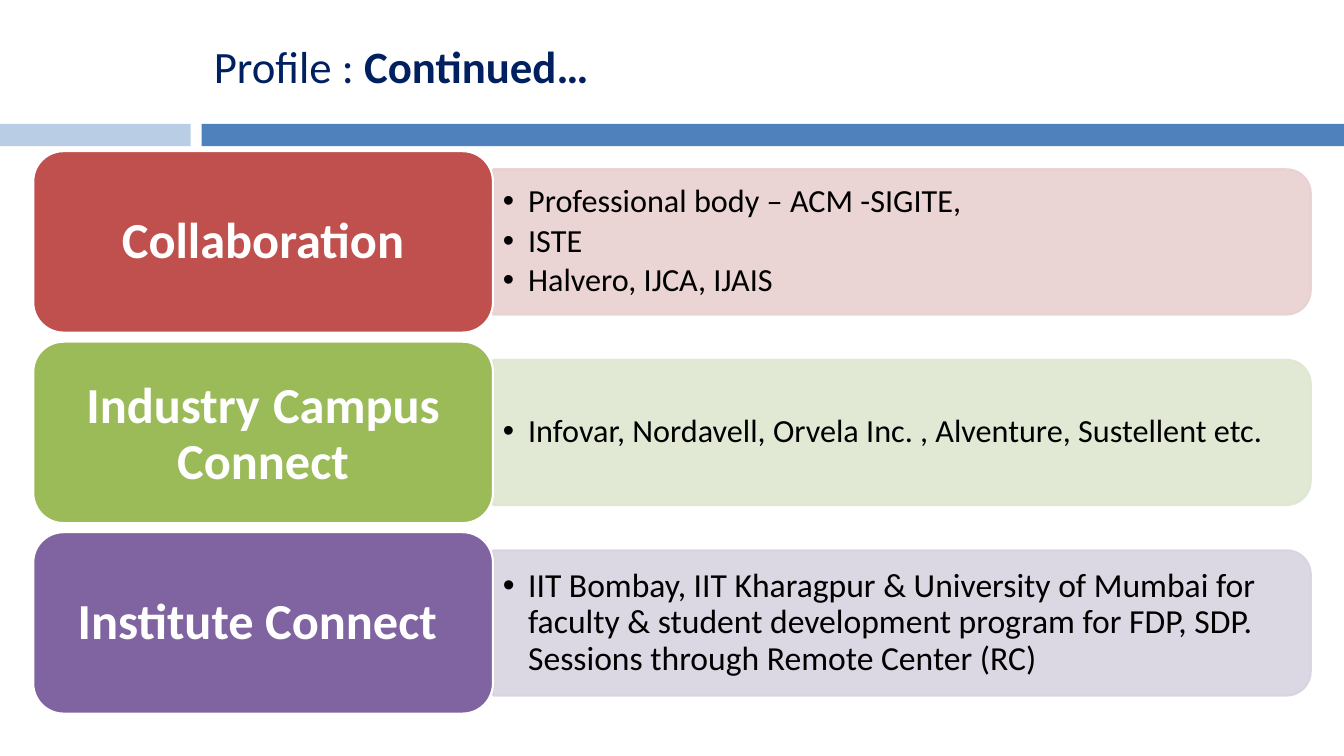
from dataclasses import dataclass

from lxml.etree import SubElement
from pptx import Presentation
from pptx.dml.color import RGBColor
from pptx.enum.shapes import MSO_SHAPE as Shape
from pptx.enum.text import MSO_ANCHOR as Anchor, PP_ALIGN as Align
from pptx.oxml.ns import qn
from pptx.util import Inches, Pt


@dataclass(frozen=True)
class Theme:
    font: str = "Calibri"
    title: str = "002060"
    band_light: str = "B9CDE5"
    band_dark: str = "4F81BD"
    white: str = "FFFFFF"
    black: str = "000000"
    title_size: int = 32
    heading_size: int = 36
    wide_space_size: int = 41
    body_size: int = 23
    long_body_size: int = 24
    outline: float = 1.5


THEME = Theme()
FIRST_ROW_TOP, ROW_STEP = 1.5, 1.89
HEADING_LEFT, HEADING_WIDTH, HEADING_HEIGHT = 0.33, 4.56, 1.8
PANEL_WIDTH, PANEL_HEIGHT = 8.11, 1.44
BODY_WIDTH, BODY_HEIGHT = 8.04, 1.3

# heading runs, heading colour, panel colour, body size, body lines
ROWS = [
    ([("Collaboration", THEME.heading_size)], "C0504D", "E8D0D0", THEME.body_size,
     ["Professional body – ACM -SIGITE,", "ISTE", "Halvero, IJCA, IJAIS"]),
    ([("Industry", THEME.heading_size), (" ", THEME.wide_space_size),
      ("Campus Connect", THEME.heading_size)], "9BBB59", "DEE7D1", THEME.body_size,
     ["Infovar, Nordavell, Orvela Inc. , Alventure, Sustellent etc."]),
    ([("Institute Connect ", THEME.heading_size)], "8064A2", "D8D3E0", THEME.long_body_size,
     ["IIT Bombay, IIT Kharagpur & University of Mumbai for faculty & student "
      "development program for FDP, SDP. Sessions through Remote Center (RC)"]),
]


class SlideBuilder:
    def __init__(self, slide, theme):
        self.slide = slide
        self.theme = theme

    def add_block(self, preset, left, top, width, height, color, outline=None):
        shape = self.slide.shapes.add_shape(
            preset, Inches(left), Inches(top), Inches(width), Inches(height))
        shape.shadow.inherit = False
        shape.fill.solid()
        shape.fill.fore_color.rgb = RGBColor.from_string(color)
        if outline:
            shape.line.color.rgb = RGBColor.from_string(outline)
            shape.line.width = Pt(self.theme.outline)
        else:
            shape.line.fill.background()
        return shape

    def prepare_frame(self, shape, side_inset, end_inset):
        frame = shape.text_frame
        frame.word_wrap = True
        frame.vertical_anchor = Anchor.MIDDLE
        frame.margin_left = frame.margin_right = Inches(side_inset)
        frame.margin_top = frame.margin_bottom = Inches(end_inset)
        return frame

    def add_text_box(self, left, top, width, height, side_inset, end_inset):
        box = self.slide.shapes.add_textbox(
            Inches(left), Inches(top), Inches(width), Inches(height))
        return self.prepare_frame(box, side_inset, end_inset)

    def add_run(self, paragraph, text, size, color, bold=False):
        run = paragraph.add_run()
        run.text = text
        run.font.name = self.theme.font
        run.font.size = Pt(size)
        run.font.bold = bold
        run.font.color.rgb = RGBColor.from_string(color)

    def add_title(self, label, emphasis):
        paragraph = self.add_text_box(2, 0.15, 11.22, 1, 0.12, 0.06).paragraphs[0]
        self.add_run(paragraph, label, self.theme.title_size, self.theme.title)
        self.add_run(paragraph, emphasis, self.theme.title_size, self.theme.title, bold=True)

    def add_panel(self, left, center_y, color):
        """Add a translucent bar, turned so that its round corners face right."""
        panel = self.add_block(
            Shape.ROUND_2_SAME_RECTANGLE,
            left + (PANEL_WIDTH - PANEL_HEIGHT) / 2, center_y - PANEL_WIDTH / 2,
            PANEL_HEIGHT, PANEL_WIDTH, color, color)
        panel.rotation = 90
        for color_element in panel._element.spPr.iter(qn("a:srgbClr")):
            SubElement(color_element, qn("a:alpha"), val="90000")

    def add_bullets(self, left, center_y, lines, size):
        frame = self.add_text_box(
            left, center_y - BODY_HEIGHT / 2, BODY_WIDTH, BODY_HEIGHT, 0.1, 0.05)
        for index, line in enumerate(lines):
            paragraph = frame.add_paragraph() if index else frame.paragraphs[0]
            properties = paragraph._p.get_or_add_pPr()
            properties.set("marL", str(Inches(0.25)))
            properties.set("indent", str(Inches(-0.25)))
            SubElement(properties, qn("a:buFont"), typeface="Arial")
            SubElement(properties, qn("a:buChar"), char="•")
            paragraph.line_spacing = 0.9
            paragraph.space_after = Pt(0.15 * size)
            self.add_run(paragraph, line, size, self.theme.black)

    def add_heading(self, top, runs, color):
        block = self.add_block(
            Shape.ROUNDED_RECTANGLE, HEADING_LEFT, top, HEADING_WIDTH, HEADING_HEIGHT,
            color, self.theme.white)
        paragraph = self.prepare_frame(block, 0.15, 0.07).paragraphs[0]
        paragraph.alignment = Align.CENTER
        paragraph.line_spacing = 0.9
        for text, size in runs:
            self.add_run(paragraph, text, size, self.theme.white, bold=True)


def main():
    presentation = Presentation()
    presentation.slide_width = Inches(13.33)
    presentation.slide_height = Inches(7.5)
    slide = presentation.slides.add_slide(presentation.slide_layouts[6])
    builder = SlideBuilder(slide, THEME)

    builder.add_block(Shape.RECTANGLE, 0, 1.23, 1.89, 0.22, THEME.band_light)
    builder.add_block(Shape.RECTANGLE, 2, 1.23, 11.33, 0.22, THEME.band_dark)
    builder.add_title("Profile : ", "Continued…")

    body_left = HEADING_LEFT + HEADING_WIDTH
    for index, (heading, color, panel_color, size, lines) in enumerate(ROWS):
        top = FIRST_ROW_TOP + index * ROW_STEP
        center_y = top + HEADING_HEIGHT / 2
        builder.add_panel(body_left, center_y, panel_color)
        builder.add_bullets(body_left, center_y, lines, size)
        builder.add_heading(top, heading, color)

    presentation.save("out.pptx")


if __name__ == "__main__":
    main()
